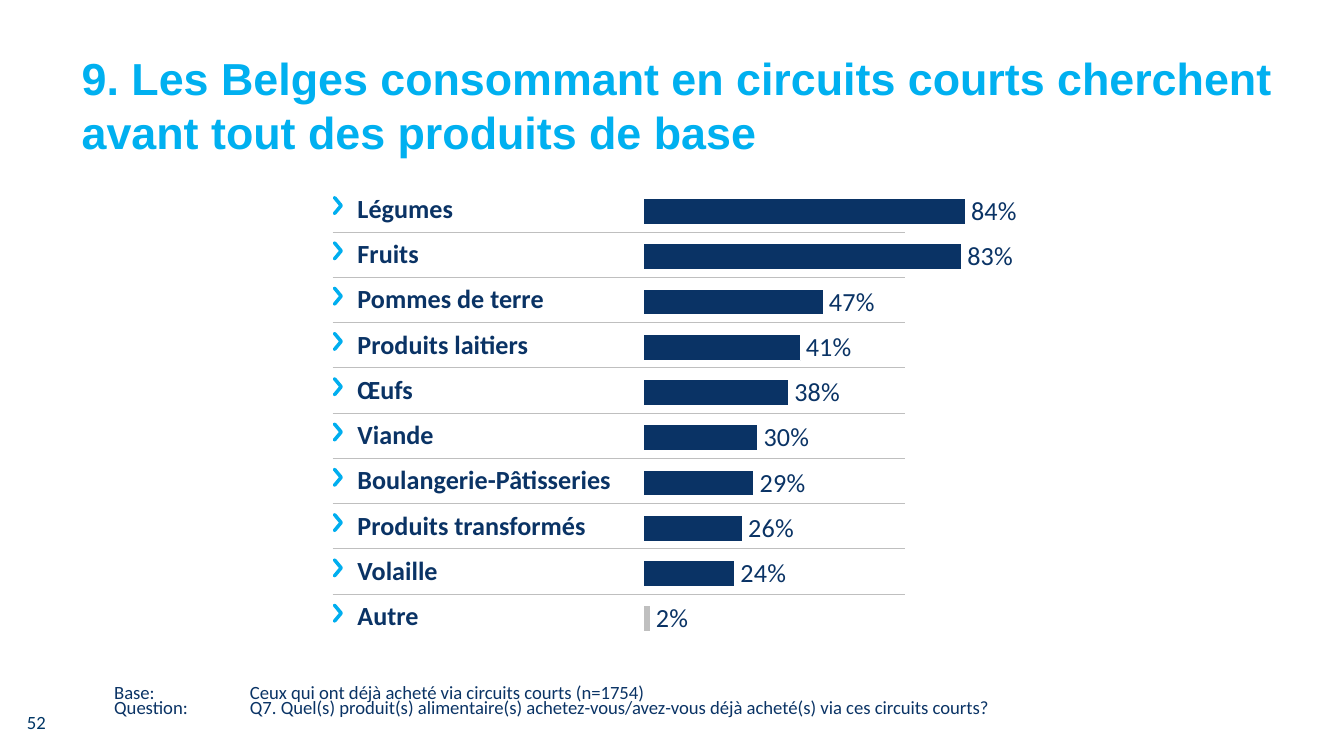
from dataclasses import dataclass

from lxml import etree
from pptx import Presentation
from pptx.chart.data import CategoryChartData
from pptx.dml.color import RGBColor
from pptx.enum.chart import XL_CHART_TYPE, XL_LABEL_POSITION, XL_TICK_LABEL_POSITION, XL_TICK_MARK
from pptx.enum.text import MSO_ANCHOR
from pptx.oxml import parse_xml
from pptx.oxml.ns import nsdecls, qn
from pptx.util import Inches, Pt

BAR = XL_CHART_TYPE.BAR_CLUSTERED
OUTSIDE = XL_LABEL_POSITION.OUTSIDE_END
NO_LABELS = XL_TICK_LABEL_POSITION.NONE
TICKS_OUT = XL_TICK_MARK.OUTSIDE
MIDDLE = MSO_ANCHOR.MIDDLE


@dataclass(frozen=True)
class Theme:
    navy: str = "0A3365"
    page: str = "003665"
    title: str = "00B0F0"
    chevron: str = "00AEEF"
    grey: str = "BFBFBF"
    white: str = "FFFFFF"
    heading_font: str = "Arial"
    body_font: str = "Calibri"
    title_size: int = 24
    label_size: int = 14
    note_size: int = 10


T = Theme()


def set_font(font, name, size, color, bold=False):
    font.name = name
    font.size = Pt(size)
    font.bold = bold
    font.color.rgb = RGBColor.from_string(color)


def add_text(s, box, margins, anchor=None):
    tf = s.shapes.add_textbox(*[Inches(v) for v in box]).text_frame
    tf.word_wrap = True
    tf.margin_left = tf.margin_right = Inches(margins[0])
    tf.margin_top = tf.margin_bottom = Inches(margins[1])
    tf.vertical_anchor = anchor
    return tf


PRODUCTS = [
    ("Légumes", 84),
    ("Fruits", 83),
    ("Pommes de terre", 47),
    ("Produits laitiers", 41),
    ("Œufs", 38),
    ("Viande", 30),
    ("Boulangerie-Pâtisseries", 29),
    ("Produits transformés", 26),
    ("Volaille", 24),
    ("Autre", 2),
]
NOTES = [
    "Base:\tCeux qui ont déjà acheté via circuits courts (n=1754)",
    "Question:\tQ7. Quel(s) produit(s) alimentaire(s) achetez-vous/avez-vous déjà acheté(s) via ces circuits courts?",
]
CHEVRON = [(10, 0), (22, 5), (68, 60), (70, 70), (68, 80), (22, 135), (10, 140),
           (0, 135), (0, 120), (42, 70), (0, 20), (0, 5)]
LEFT = Inches(2.48)
TABLE_HEIGHT = Inches(3.37)
ROW_HEIGHT = TABLE_HEIGHT // len(PRODUCTS)

prs = Presentation()
prs.slide_width = Inches(10)
prs.slide_height = Inches(10) * 9 // 16
s = prs.slides.add_slide(prs.slide_layouts[6])

tf = add_text(s, (0.85, 5.12, 8.15, 0.31), (0, 0))
for i, note in enumerate(NOTES):
    p = tf.paragraphs[0] if i == 0 else tf.add_paragraph()
    p.text = note
    tabs = etree.SubElement(p._p.get_or_add_pPr(), qn("a:tabLst"))
    etree.SubElement(tabs, qn("a:tab"), pos=str(Inches(1.01)), algn="l")
    p.line_spacing = Pt(8)
    set_font(p.font, T.body_font, T.note_size, T.navy)

p = add_text(s, (0.11, 5.22, 2.33, 0.3), (0.09, 0.04), MIDDLE).paragraphs[0]
p.text = "52"
set_font(p.font, T.body_font, T.note_size, T.page)

table = s.shapes.add_table(len(PRODUCTS), 1, LEFT, Inches(1.39), Inches(4.25), TABLE_HEIGHT).table
table.first_row = False
table.horz_banding = False
for i, (product, share) in enumerate(PRODUCTS):
    table.rows[i].height = ROW_HEIGHT
    cell = table.cell(i, 0)
    cell.text = product
    cell.vertical_anchor = MIDDLE
    cell.margin_left = Inches(0.18)
    cell.margin_right = cell.margin_top = cell.margin_bottom = 0
    set_font(cell.text_frame.paragraphs[0].font, T.body_font, T.label_size, T.navy, True)
    for edge, inner in (("lnT", i > 0), ("lnB", i < len(PRODUCTS) - 1)):
        if inner:
            ln = etree.SubElement(cell._tc.get_or_add_tcPr(), qn(f"a:{edge}"), w=str(Pt(0.5)))
            fill = etree.SubElement(ln, qn("a:solidFill"))
            etree.SubElement(fill, qn("a:srgbClr"), val=T.grey)
    cell.fill.background()

data = CategoryChartData()
data.categories = [str(i + 1) for i in range(len(PRODUCTS))]
data.add_series("Series 1", [share for product, share in PRODUCTS])
chart = s.shapes.add_chart(BAR, Inches(4.7), Inches(1.32), Inches(3.36), Inches(3.56), data).chart
chart.has_legend = False
chart.has_title = False
set_font(chart.font, T.body_font, T.label_size, T.navy)
axis = chart.category_axis
axis.reverse_order = True
axis.tick_label_position = NO_LABELS
axis.major_tick_mark = TICKS_OUT
axis.format.line.fill.background()
axis = chart.value_axis
axis.minimum_scale = 0
axis.maximum_scale = 101
axis.major_unit = 20
axis.has_major_gridlines = False
axis.visible = False

plot = chart.plots[0]
plot.gap_width = 70
plot.vary_by_categories = False
plot.has_data_labels = True
labels = plot.data_labels
labels.show_value = True
labels.number_format = '0"%"'
labels.number_format_is_linked = False
labels.position = OUTSIDE
set_font(labels.font, T.body_font, T.label_size, T.navy)
series = plot.series[0]
last = series.points[len(PRODUCTS) - 1]
for bar, color in ((series, T.navy), (last, T.grey)):
    bar.format.fill.solid()
    bar.format.fill.fore_color.rgb = RGBColor.from_string(color)
    bar.format.line.color.rgb = RGBColor.from_string(T.white)
    bar.format.line.width = Pt(1)

plot_area = chart._chartSpace.chart.plotArea
for layout in plot_area.findall(qn("c:layout")):
    plot_area.remove(layout)
plot_area.insert(0, parse_xml(
    f'<c:layout {nsdecls("c")}><c:manualLayout><c:layoutTarget val="inner"/>'
    '<c:xMode val="edge"/><c:yMode val="edge"/><c:x val="0.025"/><c:y val="0.024"/>'
    '<c:w val="0.86"/><c:h val="0.946"/></c:manualLayout></c:layout>'))

for i in range(len(PRODUCTS)):
    builder = s.shapes.build_freeform(*CHEVRON[0], scale=Inches(1) / 1000)
    builder.add_line_segments(CHEVRON[1:], close=True)
    sp = builder.convert_to_shape(LEFT, Inches(1.46) + i * ROW_HEIGHT)
    sp.shadow.inherit = False
    sp.fill.solid()
    sp.fill.fore_color.rgb = RGBColor.from_string(T.chevron)
    sp.line.fill.background()

p = add_text(s, (0.51, 0.33, 9.23, 0.59), (0.1, 0.05)).paragraphs[0]
p.text = "9. Les Belges consommant en circuits courts cherchent avant tout des produits de base"
set_font(p.font, T.heading_font, T.title_size, T.title, True)

prs.save("out.pptx")
